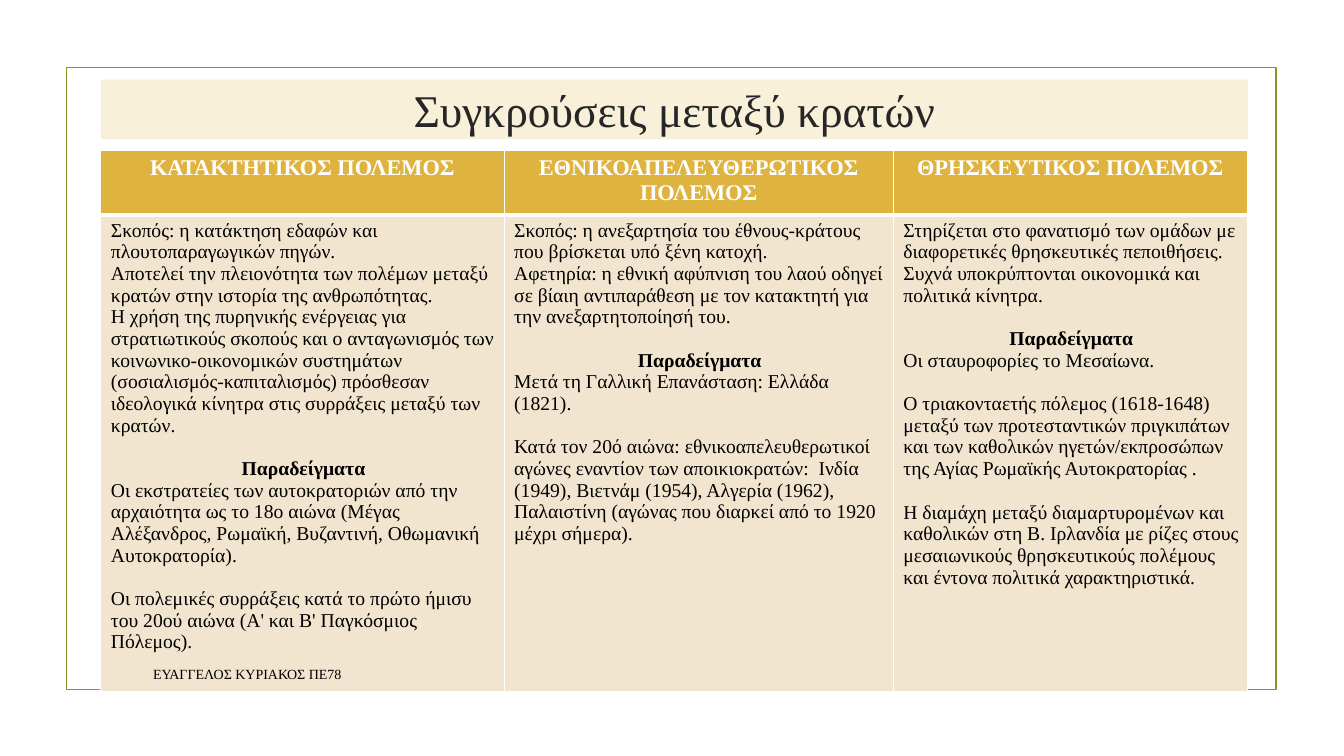
"""Build the slide comparing three kinds of war between states."""
from lxml.etree import SubElement
from pptx import Presentation
from pptx.dml.color import RGBColor
from pptx.enum.shapes import MSO_SHAPE
from pptx.enum.text import MSO_ANCHOR, PP_ALIGN
from pptx.oxml.ns import qn
from pptx.util import Inches, Pt

EXAMPLES = "Παραδείγματα"
GAP = Pt(15.5)
WARS = [
    (4, "ΚΑΤΑΚΤΗΤΙΚΟΣ ΠΟΛΕΜΟΣ",
     ["Σκοπός: η κατάκτηση εδαφών και πλουτοπαραγωγικών πηγών.",
      "Αποτελεί την πλειονότητα των πολέμων μεταξύ κρατών στην ιστορία της ανθρωπότητας.",
      "Η χρήση της πυρηνικής ενέργειας για στρατιωτικούς σκοπούς και ο ανταγωνισμός των "
      "κοινωνικο-οικονομικών συστημάτων (σοσιαλισμός-καπιταλισμός) πρόσθεσαν ιδεολογικά "
      "κίνητρα στις συρράξεις μεταξύ των κρατών."],
     ["Οι εκστρατείες των αυτοκρατοριών από την αρχαιότητα ως το 18ο αιώνα (Μέγας "
      "Αλέξανδρος, Ρωμαϊκή, Βυζαντινή, Οθωμανική Αυτοκρατορία).",
      "Οι πολεμικές συρράξεις κατά το πρώτο ήμισυ του 20ού αιώνα (Α' και Β' Παγκόσμιος "
      "Πόλεμος)."]),
    (3.86, "ΕΘΝΙΚΟΑΠΕΛΕΥΘΕΡΩΤΙΚΟΣ ΠΟΛΕΜΟΣ",
     ["Σκοπός: η ανεξαρτησία του έθνους-κράτους που βρίσκεται υπό ξένη κατοχή.",
      "Αφετηρία: η εθνική αφύπνιση του λαού οδηγεί σε βίαιη αντιπαράθεση με τον κατακτητή "
      "για την ανεξαρτητοποίησή του."],
     ["Μετά τη Γαλλική Επανάσταση: Ελλάδα (1821).",
      "Κατά τον 20ό αιώνα: εθνικοαπελευθερωτικοί αγώνες εναντίον των αποικιοκρατών:  Ινδία "
      "(1949), Βιετνάμ (1954), Αλγερία (1962), Παλαιστίνη (αγώνας που διαρκεί από το 1920 "
      "μέχρι σήμερα)."]),
    (3.51, "ΘΡΗΣΚΕΥΤΙΚΟΣ ΠΟΛΕΜΟΣ",
     ["Στηρίζεται στο φανατισμό των ομάδων με διαφορετικές θρησκευτικές πεποιθήσεις. Συχνά "
      "υποκρύπτονται οικονομικά και πολιτικά κίνητρα."],
     ["Οι σταυροφορίες το Μεσαίωνα.",
      "Ο τριακονταετής πόλεμος (1618-1648) μεταξύ των προτεσταντικών πριγκιπάτων και των "
      "καθολικών ηγετών/εκπροσώπων της Αγίας Ρωμαϊκής Αυτοκρατορίας .",
      "Η διαμάχη μεταξύ διαμαρτυρομένων και καθολικών στη Β. Ιρλανδία με ρίζες στους "
      "μεσαιωνικούς θρησκευτικούς πολέμους και έντονα πολιτικά χαρακτηριστικά."]),
]


def paint(target, color):
    target.solid()
    target.fore_color.rgb = RGBColor.from_string(color)


def style(para, size, color="000000", bold=False, align=PP_ALIGN.LEFT):
    para.alignment = align
    for run in para.runs:
        run.font.name = "Times New Roman"
        run.font.size = Pt(size)
        run.font.bold = bold
        paint(run.font.fill, color)


deck = Presentation()
deck.slide_width, deck.slide_height = Inches(13.33), Inches(7.5)
slide = deck.slides.add_slide(deck.slide_layouts[6])
shapes = slide.shapes

frame = shapes.add_shape(MSO_SHAPE.RECTANGLE, Inches(0.66), Inches(0.67), Inches(12), Inches(6.17))
frame.shadow.inherit = False
frame.fill.background()
paint(frame.line.fill, "83992A")
frame.line.width = Pt(1.25)

title = shapes.add_textbox(Inches(1), Inches(0.79), Inches(11.38), Inches(0.59))
paint(title.fill, "F8F0D9")
title.text_frame.text = "Συγκρούσεις μεταξύ κρατών"
style(title.text_frame.paragraphs[0], 32.4, "262626", align=PP_ALIGN.CENTER)

table = shapes.add_table(2, 3, Inches(1), Inches(1.49), Inches(11.37), Inches(5.03)).table
table.horz_banding = False
table.rows[0].height, table.rows[1].height = Inches(0.64), Inches(4.39)

for col, (width, name, traits, cases) in enumerate(WARS):
    table.columns[col].width = Inches(width)
    head, body = table.cell(0, col), table.cell(1, col)
    for cell, thick, color in ((head, "lnB", "DEB340"), (body, "lnT", "F2E5CF")):
        props = cell._tc.get_or_add_tcPr()
        for side in ("lnL", "lnR", "lnT", "lnB"):
            weight = Pt(3 if side == thick else 1)
            edge = SubElement(props, qn("a:" + side), w=str(weight))
            SubElement(SubElement(edge, qn("a:solidFill")), qn("a:srgbClr"), val="FFFFFF")
        paint(cell.fill, color)

    head.text_frame.text = name
    style(head.text_frame.paragraphs[0], 16, "FFFFFF", True, PP_ALIGN.CENTER)

    body.margin_right = Inches(0.08)
    body.text_frame.text = "\n".join([*traits, EXAMPLES, *cases])
    last = len(traits) + len(cases)
    for row, para in enumerate(body.text_frame.paragraphs):
        label = row == len(traits)
        style(para, 14, bold=label, align=PP_ALIGN.CENTER if label else PP_ALIGN.LEFT)
        if row == len(traits) - 1 or len(traits) < row < last:
            para.space_after = GAP

footer = shapes.add_textbox(Inches(1.42), Inches(6.53), Inches(7.99), Inches(0.31))
footer.text_frame.text = "ΕΥΑΓΓΕΛΟΣ ΚΥΡΙΑΚΟΣ ΠΕ78"
style(footer.text_frame.paragraphs[0], 10)

for box in (title, footer):
    box.text_frame.word_wrap = True
    box.text_frame.vertical_anchor = MSO_ANCHOR.MIDDLE

deck.save("out.pptx")
